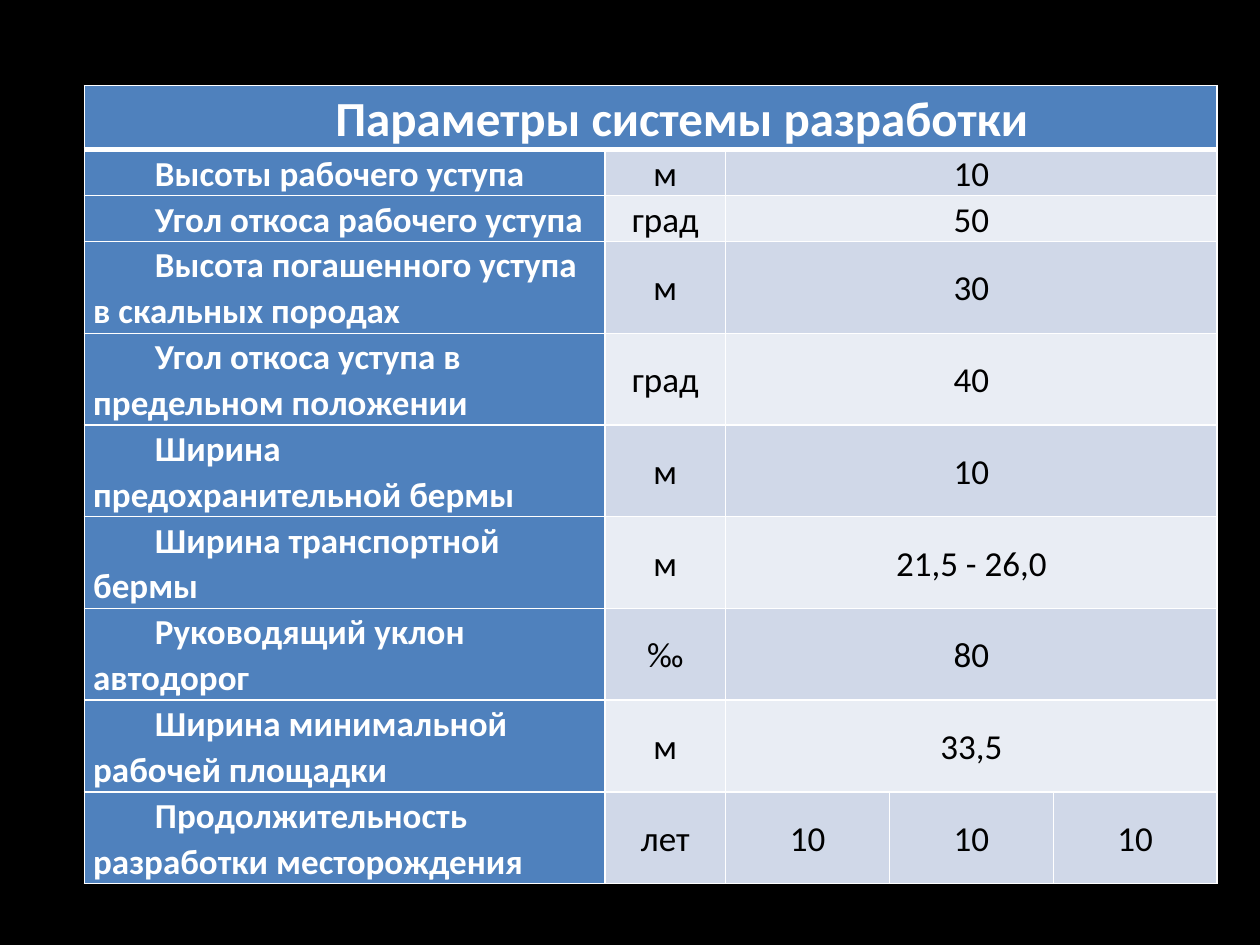
from dataclasses import dataclass

from lxml import etree
from pptx import Presentation
from pptx.dml.color import RGBColor
from pptx.enum.text import MSO_ANCHOR, PP_ALIGN
from pptx.oxml.ns import qn
from pptx.table import _Cell
from pptx.util import Inches, Pt

LEFT, CENTER = PP_ALIGN.LEFT, PP_ALIGN.CENTER
MIDDLE = MSO_ANCHOR.MIDDLE

BLACK = RGBColor(0x00, 0x00, 0x00)
WHITE = RGBColor(0xFF, 0xFF, 0xFF)
HEADING_BLUE = RGBColor(0x4F, 0x81, 0xBD)
BAND_DARK = RGBColor(0xD0, 0xD8, 0xE8)
BAND_LIGHT = RGBColor(0xE9, 0xED, 0xF4)

FONT = "Calibri"
LINE_SPACING = 1.07
FIRST_LINE_INDENT = Inches(0.49)
SIDE_MARGIN = Inches(0.07)
ROW_HEIGHT = Inches(0.32)
COLUMN_WIDTHS = [Inches(w) for w in (4.13, 0.96, 1.3, 1.3, 1.3)]
THIN, THICK = Pt(1), Pt(3)
VALUE_COLUMN = 2
LAST_COLUMN = len(COLUMN_WIDTHS) - 1


@dataclass(frozen=True)
class Parameter:
    name: str
    unit: str
    values: tuple[str, ...]


@dataclass(frozen=True)
class CellStyle:
    fill: RGBColor
    color: RGBColor
    bold: bool
    size: int = 20
    align: PP_ALIGN = CENTER
    indented: bool = False


HEADING = "Параметры системы разработки"
PARAMETERS = [
    Parameter("Высоты рабочего уступа", "м", ("10",)),
    Parameter("Угол откоса рабочего уступа", "град", ("50",)),
    Parameter("Высота погашенного уступа в скальных породах", "м", ("30",)),
    Parameter("Угол откоса уступа в предельном положении", "град", ("40",)),
    Parameter("Ширина предохранительной бермы", "м", ("10",)),
    Parameter("Ширина транспортной бермы", "м", ("21,5 - 26,0",)),
    Parameter("Руководящий уклон автодорог", "‰", ("80",)),
    Parameter("Ширина минимальной рабочей площадки", "м", ("33,5",)),
    Parameter("Продолжительность разработки месторождения", "лет", ("10", "10", "10")),
]

HEADING_STYLE = CellStyle(HEADING_BLUE, WHITE, True, size=28, indented=True)
NAME_STYLE = CellStyle(HEADING_BLUE, WHITE, True, align=LEFT, indented=True)
DARK_STYLE = CellStyle(BAND_DARK, BLACK, False)
LIGHT_STYLE = CellStyle(BAND_LIGHT, BLACK, False)


def set_borders(cell: _Cell, top: int = THIN, bottom: int = THIN) -> None:
    """Draw white lines on all four sides; call before setting the fill."""
    properties = cell._tc.get_or_add_tcPr()
    for side, width in (("L", THIN), ("R", THIN), ("T", top), ("B", bottom)):
        line = etree.SubElement(properties, qn(f"a:ln{side}"), w=str(int(width)))
        solid = etree.SubElement(line, qn("a:solidFill"))
        etree.SubElement(solid, qn("a:srgbClr"), val=str(WHITE))


def write_text(cell: _Cell, text: str, style: CellStyle) -> None:
    cell.vertical_anchor = MIDDLE
    cell.margin_left = cell.margin_right = SIDE_MARGIN
    cell.margin_top = cell.margin_bottom = 0
    paragraph = cell.text_frame.paragraphs[0]
    paragraph.alignment = style.align
    paragraph.line_spacing = LINE_SPACING
    if style.indented:
        paragraph._p.get_or_add_pPr().set("indent", str(int(FIRST_LINE_INDENT)))
    run = paragraph.add_run()
    run.text = text
    run.font.name = FONT
    run.font.size = Pt(style.size)
    run.font.bold = style.bold
    run.font.color.rgb = style.color


def fill_cell(cell: _Cell, color: RGBColor) -> None:
    cell.fill.solid()
    cell.fill.fore_color.rgb = color


def main() -> None:
    presentation = Presentation()
    presentation.slide_width = Inches(10)
    presentation.slide_height = Inches(7.5)
    slide = presentation.slides.add_slide(presentation.slide_layouts[6])
    slide.background.fill.solid()
    slide.background.fill.fore_color.rgb = BLACK

    # Table grid
    row_count = len(PARAMETERS) + 1
    frame = slide.shapes.add_table(
        row_count, len(COLUMN_WIDTHS),
        Inches(0.67), Inches(0.68), Inches(9), Inches(6.03),
    )
    table = frame.table
    for column, width in zip(table.columns, COLUMN_WIDTHS):
        column.width = width
    for row in table.rows:
        row.height = ROW_HEIGHT
    frame.height = Inches(6.03)

    # Borders and fills, with a thick rule under the heading
    for row in range(row_count):
        band = DARK_STYLE if row % 2 else LIGHT_STYLE
        for column in range(len(COLUMN_WIDTHS)):
            cell = table.cell(row, column)
            set_borders(
                cell,
                top=THICK if row == 1 else THIN,
                bottom=THICK if row == 0 else THIN,
            )
            is_heading = row == 0 or column == 0
            fill_cell(cell, HEADING_BLUE if is_heading else band.fill)

    # Heading across all columns
    table.cell(0, 0).merge(table.cell(0, LAST_COLUMN))
    write_text(table.cell(0, 0), HEADING, HEADING_STYLE)

    # Parameter rows; a single value spans the value columns
    for row, parameter in enumerate(PARAMETERS, start=1):
        band = DARK_STYLE if row % 2 else LIGHT_STYLE
        write_text(table.cell(row, 0), parameter.name, NAME_STYLE)
        write_text(table.cell(row, 1), parameter.unit, band)
        if len(parameter.values) == 1:
            table.cell(row, VALUE_COLUMN).merge(table.cell(row, LAST_COLUMN))
        for column, value in enumerate(parameter.values, start=VALUE_COLUMN):
            write_text(table.cell(row, column), value, band)

    presentation.save("out.pptx")


if __name__ == "__main__":
    main()
